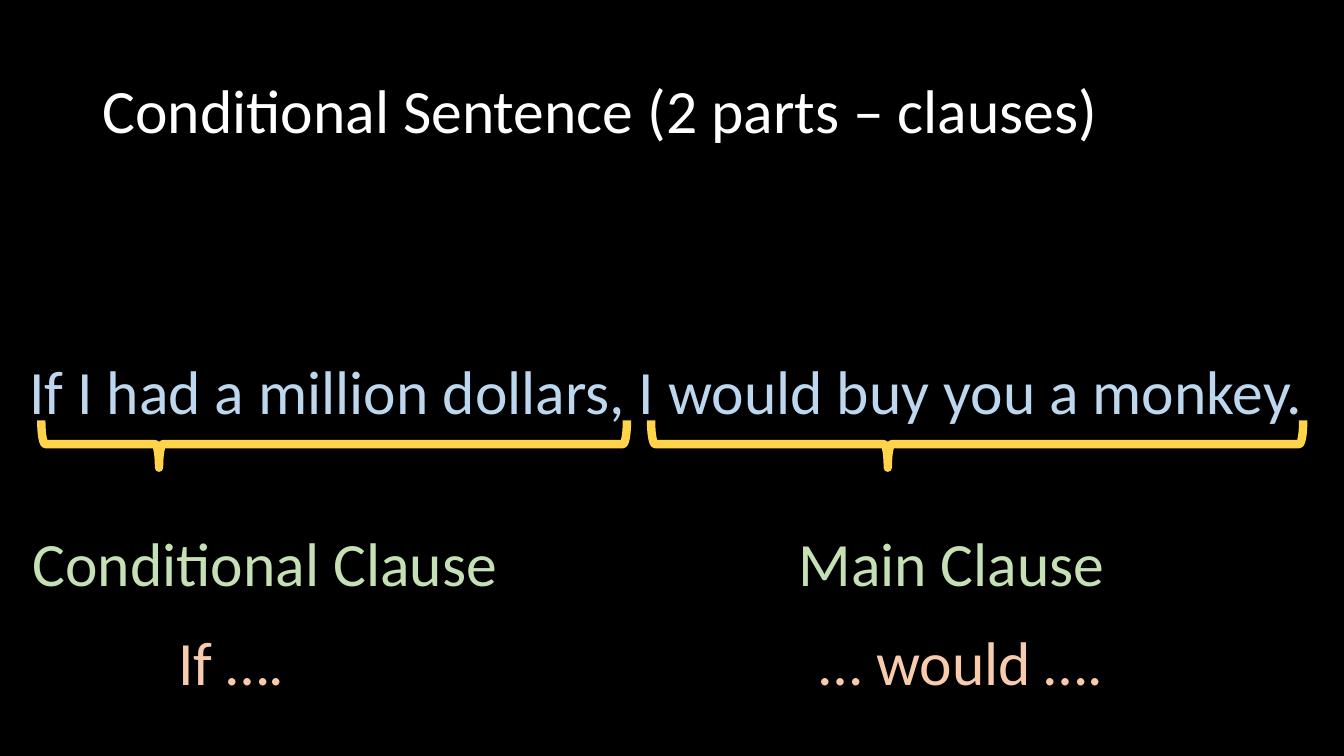
from pptx import Presentation
from pptx.dml.color import RGBColor
from pptx.enum.shapes import MSO_SHAPE
from pptx.enum.text import MSO_ANCHOR, MSO_AUTO_SIZE, PP_ALIGN
from pptx.util import Pt

LEFT, CENTER = PP_ALIGN.LEFT, PP_ALIGN.CENTER
MIDDLE = MSO_ANCHOR.MIDDLE
NO_FIT = MSO_AUTO_SIZE.NONE
LEFT_BRACE = MSO_SHAPE.LEFT_BRACE

BLACK, WHITE, YELLOW = "000000", "FFFFFF", "FFD44B"
BLUE, GREEN, PEACH = "BDD7EE", "C5E0B4", "F8CBAD"

TEXT_HEIGHT = 104.4
TITLE = ("Conditional Sentence (2 parts – clauses)", 66, 28.8, 828, WHITE)
# text, left, top, width, colour; a closing space shifts centred text left
LABELS = [
    ("If I had a million dollars, I would buy you a monkey. ", 4.3, 229.7, 954, BLUE),
    ("Conditional Clause ", 1.4, 352.8, 385.9, GREEN),
    ("Main Clause ", 491.8, 352.8, 385.9, GREEN),
    ("If ….", 4.3, 423.4, 321.8, PEACH),
    ("… would ….", 493.9, 423.4, 385.9, PEACH),
]

BRACE_MIDDLE, BRACE_DEPTH, BRACE_CURVE = 317.2, 33.8, 0.083
# left, length, position of the tip along the brace
BRACES = [(29.5, 418.3, 0.201), (465.1, 465.8, 0.363)]


def color(value):
    return RGBColor.from_string(value)


def write(box, text, left, top, width, text_color, align):
    box.left, box.top = Pt(left), Pt(top)
    box.width, box.height = Pt(width), Pt(TEXT_HEIGHT)
    frame = box.text_frame
    frame.text = text
    frame.word_wrap = True
    frame.auto_size = NO_FIT
    frame.vertical_anchor = MIDDLE
    paragraph = frame.paragraphs[0]
    paragraph.alignment = align
    paragraph.line_spacing = 0.9
    paragraph.font.name = "Calibri"
    paragraph.font.size = Pt(44)
    paragraph.font.color.rgb = color(text_color)


def add_brace(page, left, length, tip):
    """Draw an upright brace turned a quarter so that its tip points down."""
    upright_left = left + (length - BRACE_DEPTH) / 2
    upright_top = BRACE_MIDDLE - length / 2
    brace = page.shapes.add_shape(
        LEFT_BRACE, Pt(upright_left), Pt(upright_top), Pt(BRACE_DEPTH), Pt(length))
    brace.rotation = 270
    brace.adjustments[0] = BRACE_CURVE
    brace.adjustments[1] = tip
    brace.shadow.inherit = False
    brace.fill.background()
    brace.line.color.rgb = color(YELLOW)
    brace.line.width = Pt(6)


def main():
    deck = Presentation()
    deck.slide_width, deck.slide_height = Pt(960), Pt(540)
    page = deck.slides.add_slide(deck.slide_layouts[5])
    page.background.fill.solid()
    page.background.fill.fore_color.rgb = color(BLACK)

    write(page.shapes.title, *TITLE, LEFT)
    for brace in BRACES:
        add_brace(page, *brace)
    for label in LABELS:
        write(page.shapes.add_textbox(0, 0, 0, 0), *label, CENTER)

    deck.save("out.pptx")


if __name__ == "__main__":
    main()
